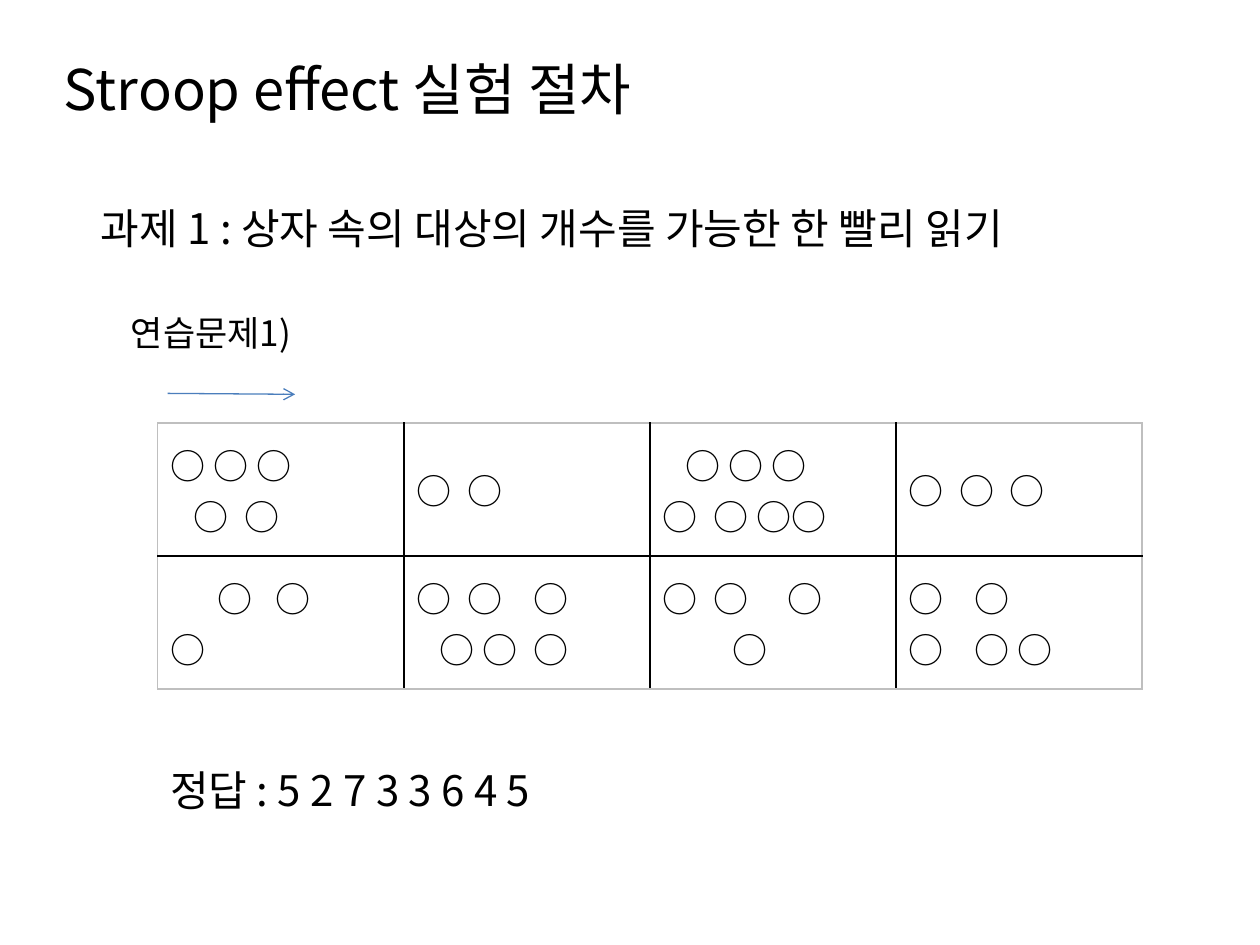
from dataclasses import dataclass

from lxml.etree import SubElement
from pptx import Presentation
from pptx.dml.color import RGBColor
from pptx.enum.shapes import MSO_CONNECTOR
from pptx.enum.text import MSO_ANCHOR, MSO_AUTO_SIZE
from pptx.oxml.ns import qn
from pptx.util import Cm, Pt


@dataclass(frozen=True)
class Theme:
    font: str = "Noto Sans CJK KR"
    ink: str = "000000"
    frame: str = "BFBFBF"
    arrow: str = "4B7EBC"
    title: int = 32
    body: int = 24
    small: int = 20
    border: float = 1
    arrow_width: float = 0.75


THEME = Theme()
SPACE_RATIO = 0.224

CIRCLE_GAPS = [
    [[(0, 1, 1), (3, 2)], [(0, 2)], [(3, 1, 1), (0, 2, 1, 0)], [(0, 2, 2)]],
    [[(6, 3), (0,)], [(0, 2, 4), (3, 1, 2)], [(0, 2, 5), (9,)], [(0, 4), (0, 4, 1)]],
]

HEADINGS = [
    ("Stroop effect 실험 절차", THEME.title, (1.04, 0.97, 12.55, 1.63)),
    ("과제 1 : 상자 속의 대상의 개수를 가능한 한 빨리 읽기", THEME.body, (1.78, 3.96, 21.31, 1.27)),
    ("연습문제1)", THEME.small, (2.39, 6.15, 4.22, 1.12)),
    ("정답 : 5 2 7 3 3 6 4 5", THEME.body, (3.18, 15.29, 8.92, 1.27)),
]


def apply_format(target, values):
    for name, value in values.items():
        setattr(target, name, value)


def write_line(paragraph, words, size):
    run = paragraph.add_run()
    run.text = words
    apply_format(run.font, {"name": THEME.font, "size": Pt(size)})
    run.font.color.rgb = RGBColor.from_string(THEME.ink)
    SubElement(run.font._element, qn("a:ea"), typeface=THEME.font)


def add_heading(slide, words, size, box):
    heading = slide.shapes.add_textbox(*map(Cm, box)).text_frame
    apply_format(heading, {"word_wrap": False, "auto_size": MSO_AUTO_SIZE.SHAPE_TO_FIT_TEXT})
    write_line(heading.paragraphs[0], words, size)


def write_circles(paragraph, gaps):
    circles, stops, position = "", [], 0
    for gap in gaps:
        position += gap * SPACE_RATIO
        if gap > 1:
            stops.append(Pt(round(position * THEME.small, 2)))
        circles += ("\t" if gap > 1 else " " * gap) + "○"
        position += 1
    if stops:
        tab_list = SubElement(paragraph._p.get_or_add_pPr(), qn("a:tabLst"))
        for stop in stops:
            SubElement(tab_list, qn("a:tab"), pos=str(stop), algn="l")
    write_line(paragraph, circles, THEME.small)


def set_borders(cell, colors):
    properties = cell._tc.get_or_add_tcPr()
    for index, (side, color) in enumerate(colors.items()):
        edge = properties.makeelement(qn(f"a:{side}"), {"w": str(Pt(THEME.border))})
        fill = SubElement(edge, qn("a:solidFill"))
        SubElement(fill, qn("a:srgbClr"), val=color)
        properties.insert(index, edge)


def add_circle_grid(slide, box):
    row_count, column_count = len(CIRCLE_GAPS), len(CIRCLE_GAPS[0])
    grid = slide.shapes.add_table(row_count, column_count, *map(Cm, box)).table
    apply_format(grid, {"first_row": False, "horz_banding": False})
    for row, row_gaps in enumerate(CIRCLE_GAPS):
        for column, lines in enumerate(row_gaps):
            cell = grid.cell(row, column)
            cell.vertical_anchor = MSO_ANCHOR.MIDDLE
            cell.fill.background()
            outer = {
                "lnL": column == 0,
                "lnR": column == column_count - 1,
                "lnT": row == 0,
                "lnB": row == row_count - 1,
            }
            set_borders(cell, {side: THEME.frame if edge else THEME.ink for side, edge in outer.items()})
            for index, gaps in enumerate(lines):
                text = cell.text_frame
                write_circles(text.add_paragraph() if index else text.paragraphs[0], gaps)


def add_reading_arrow(slide, box):
    left, top, width, height = box
    ends = (left, top, left + width, top + height)
    arrow = slide.shapes.add_connector(MSO_CONNECTOR.STRAIGHT, *map(Cm, ends))
    arrow.line.width = Pt(THEME.arrow_width)
    arrow.line.color.rgb = RGBColor.from_string(THEME.arrow)
    SubElement(arrow.line._get_or_add_ln(), qn("a:tailEnd"), type="arrow")
    SubElement(arrow._element.spPr, qn("a:effectLst"))


def main():
    deck = Presentation()
    apply_format(deck, {"slide_width": Cm(25.4), "slide_height": Cm(19.05)})
    slide = deck.slides.add_slide(deck.slide_layouts[6])
    for words, size, box in HEADINGS:
        add_heading(slide, words, size, box)
    add_circle_grid(slide, (3.18, 8.53, 19.84, 5.36))
    add_reading_arrow(slide, (3.38, 7.93, 2.57, 0.02))
    deck.save("out.pptx")


if __name__ == "__main__":
    main()
